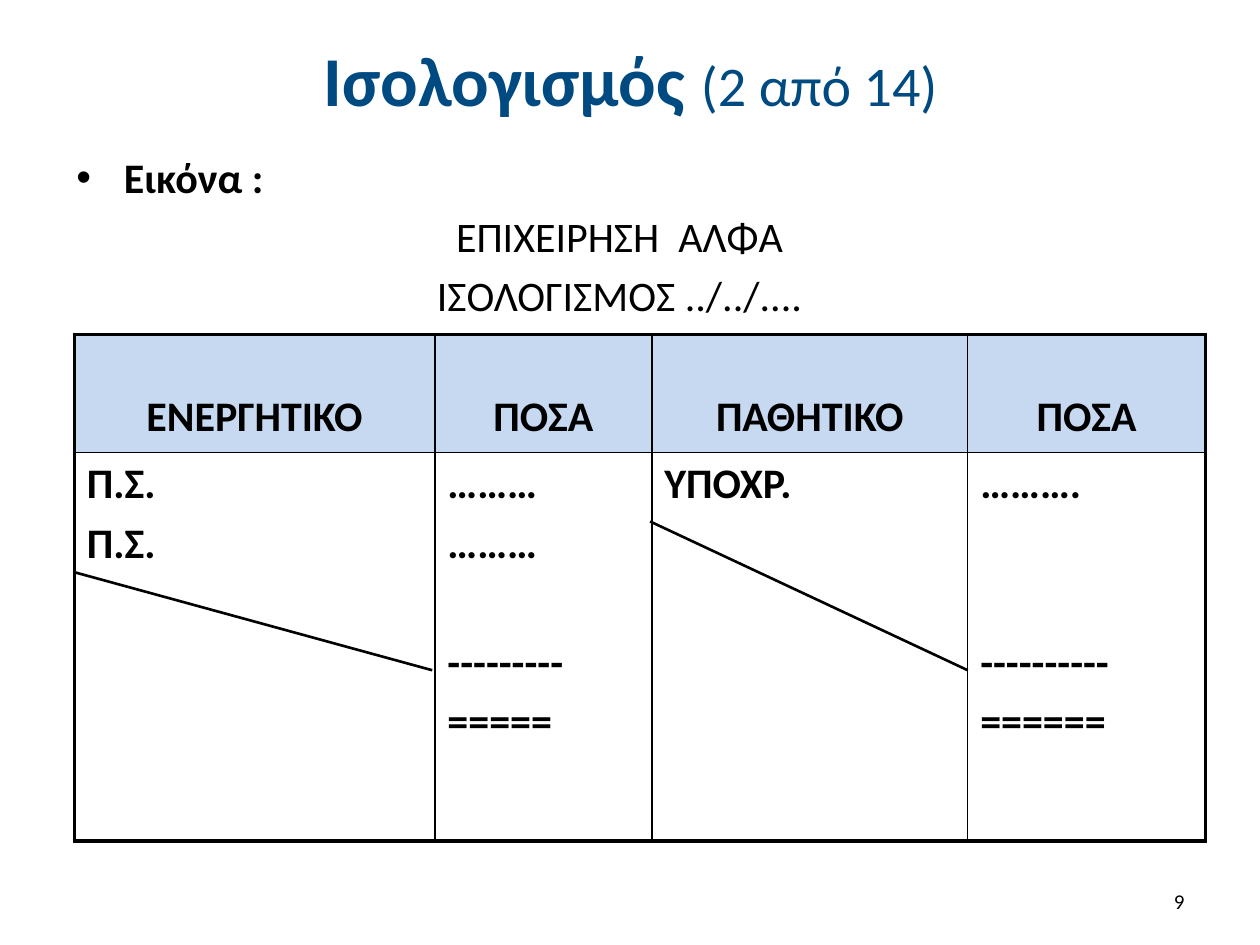
"""Build a balance sheet slide with a two-sided account table."""
from lxml import etree
from pptx import Presentation
from pptx.dml.color import RGBColor
from pptx.enum.shapes import MSO_CONNECTOR
from pptx.enum.text import MSO_ANCHOR, PP_ALIGN
from pptx.oxml import parse_xml
from pptx.oxml.ns import nsdecls, qn
from pptx.util import Pt

STRAIGHT = MSO_CONNECTOR.STRAIGHT
MIDDLE = MSO_ANCHOR.MIDDLE
LEFT, CENTER, RIGHT = PP_ALIGN.LEFT, PP_ALIGN.CENTER, PP_ALIGN.RIGHT
BLACK, BLUE, PALE = "000000", "004A82", "C6D9F1"
GAP, LINE = 4.8, 34


def rgb(value):
    return RGBColor.from_string(value)


def add_text(p, text, size=24, bold=False, color=BLACK, align=LEFT, before=0, spacing=1.0):
    p.alignment = align
    p.space_before = Pt(before)
    p.line_spacing = spacing
    r = p.add_run()
    r.text = text
    r.font.name = "Calibri"
    r.font.size = Pt(size)
    r.font.bold = bold
    r.font.color.rgb = rgb(color)


prs = Presentation()
prs.slide_width, prs.slide_height = Pt(720), Pt(540)
s = prs.slides.add_slide(prs.slide_layouts[1])

title = s.shapes.title
title.left, title.top, title.width, title.height = Pt(36.5), Pt(9.5), Pt(648), Pt(71)
tf = title.text_frame
tf.vertical_anchor = MIDDLE
p = tf.paragraphs[0]
add_text(p, "Ισολογισμός ", size=40, bold=True, color=BLUE, align=CENTER)
add_text(p, "(2 από 14)", size=32, color=BLUE, align=CENTER)

body = s.placeholders[1]
body.left, body.top, body.width, body.height = Pt(36.5), Pt(83), Pt(635), Pt(108)
tf = body.text_frame
add_text(tf.paragraphs[0], "Εικόνα :", bold=True)
for text in ("ΕΠΙΧΕΙΡΗΣΗ  ΑΛΦΑ", "ΙΣΟΛΟΓΙΣΜΟΣ ../../...."):
    p = tf.add_paragraph()
    pPr = p._p.get_or_add_pPr()
    pPr.set("marL", "0")
    pPr.set("indent", "0")
    etree.SubElement(pPr, qn("a:buNone"))
    add_text(p, text, align=CENTER, before=GAP)

widths = (206, 124, 180.5, 136)
heights = (67.5, 222)
headers = ("ENEΡΓΗΤΙΚΟ", "ΠΟΣΑ", "ΠΑΘΗΤΙΚΟ", "ΠΟΣΑ")
entries = (
    (("Π.Σ.", 0), ("Π.Σ.", GAP)),
    (("………", 0), ("………", GAP), ("---------", GAP + LINE), ("=====", GAP)),
    (("ΥΠΟΧΡ.", 0),),
    (("……….", 0), ("----------", GAP + 2 * LINE), ("======", GAP)),
)
table = s.shapes.add_table(2, 4, Pt(42.5), Pt(191), Pt(sum(widths)), Pt(sum(heights))).table
table.horz_banding = False
for column, width in zip(table.columns, widths):
    column.width = Pt(width)
for row, height in zip(table.rows, heights):
    row.height = Pt(height)

for col in range(4):
    head, cell = table.cell(0, col), table.cell(1, col)
    add_text(head.text_frame.paragraphs[0], headers[col], bold=True, align=CENTER, spacing=2.0)
    head.fill.solid()
    head.fill.fore_color.rgb = rgb(PALE)
    cell.fill.background()
    tf = cell.text_frame
    for i, (text, before) in enumerate(entries[col]):
        p = tf.add_paragraph() if i else tf.paragraphs[0]
        add_text(p, text, bold=True, before=before)
    for row, c in enumerate((head, cell)):
        outer = {"L": col == 0, "R": col == 3, "T": row == 0, "B": row == 1}
        for i, (side, thick) in enumerate(outer.items()):
            width = Pt(2.25 if thick else 1)
            c._tc.get_or_add_tcPr().insert(i, parse_xml(
                f'<a:ln{side} {nsdecls("a")} w="{width}"><a:solidFill>'
                f'<a:srgbClr val="{BLACK}"/></a:solidFill></a:ln{side}>'))

for x1, y1, x2, y2 in ((42.5, 327, 247, 383), (371.5, 298, 553, 383)):
    line = s.shapes.add_connector(STRAIGHT, Pt(x1), Pt(y1), Pt(x2), Pt(y2))
    line.line.color.rgb = rgb(BLACK)
    line.line.width = Pt(1.5)
    etree.SubElement(line._element.spPr, qn("a:effectLst"))

number = s.shapes.add_textbox(Pt(516), Pt(500.5), Pt(168), Pt(29))
tf = number.text_frame
tf.word_wrap = True
tf.vertical_anchor = MIDDLE
add_text(tf.paragraphs[0], "9", size=12, align=RIGHT)

prs.save("out.pptx")
